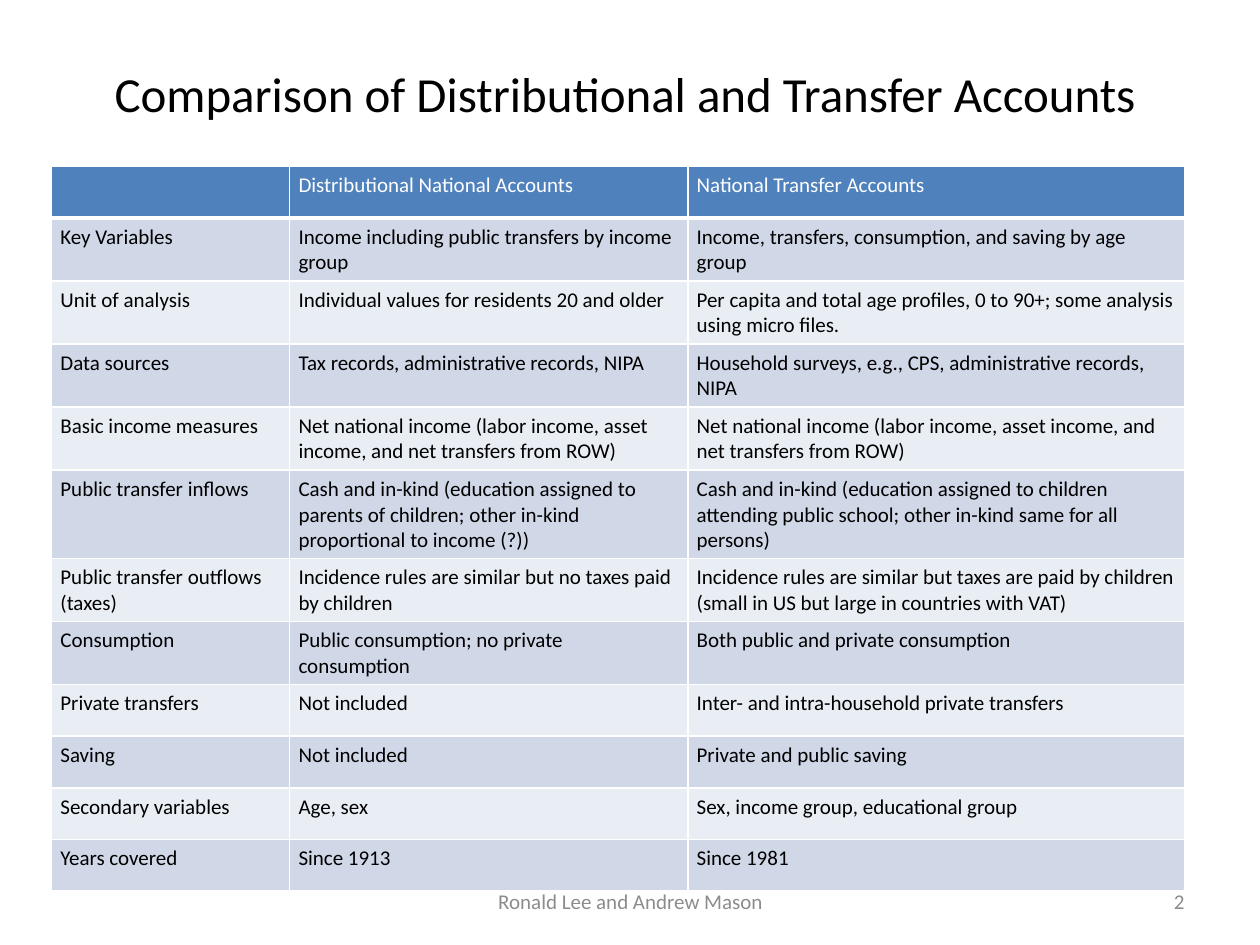
from lxml import etree
from pptx import Presentation
from pptx.dml.color import RGBColor
from pptx.enum.text import MSO_ANCHOR, PP_ALIGN
from pptx.oxml.ns import qn
from pptx.util import Inches, Pt

MIDDLE = MSO_ANCHOR.MIDDLE
CENTER, RIGHT = PP_ALIGN.CENTER, PP_ALIGN.RIGHT
FONT = "Calibri"
COLORS = {
    "black": "000000",
    "white": "FFFFFF",
    "gray": "8C8C8C",
    "head": "4F81BD",
    "dark": "D0D8E8",
    "light": "E9EDF4",
}
WIDTHS = [1.89, 3.16, 3.94]
ROW = 0.41
INCOME = "Net national income (labor income, asset income, and net transfers from ROW)"
ROWS = [
    ("", "Distributional National Accounts", "National Transfer Accounts"),
    ("Key Variables", "Income including public transfers by income group",
     "Income, transfers, consumption, and saving by age group"),
    ("Unit of analysis", "Individual values for residents 20 and older",
     "Per capita and total age profiles, 0 to 90+; some analysis using micro files."),
    ("Data sources", "Tax records, administrative records, NIPA",
     "Household surveys, e.g., CPS, administrative records, NIPA"),
    ("Basic income measures", INCOME, INCOME),
    ("Public transfer inflows",
     "Cash and in-kind (education assigned to parents of children; "
     "other in-kind proportional to income (?))",
     "Cash and in-kind (education assigned to children attending public school; "
     "other in-kind same for all persons)"),
    ("Public transfer outflows (taxes)",
     "Incidence rules are similar but no taxes paid by children",
     "Incidence rules are similar but taxes are paid by children "
     "(small in US but large in countries with VAT)"),
    ("Consumption", "Public consumption; no private consumption",
     "Both public and private consumption"),
    ("Private transfers", "Not included", "Inter- and intra-household private transfers"),
    ("Saving", "Not included", "Private and public saving"),
    ("Secondary variables", "Age, sex", "Sex, income group, educational group"),
    ("Years covered", "Since 1913", "Since 1981"),
]


def rgb(name):
    return RGBColor.from_string(COLORS[name])


def add_run(par, text, size, color):
    run = par.add_run()
    run.text = text
    run.font.name = FONT
    run.font.size = Pt(size)
    run.font.color.rgb = rgb(color)


def add_text(slide, box, text, size, color, align):
    frame = slide.shapes.add_textbox(*map(Inches, box)).text_frame
    frame.word_wrap = True
    frame.vertical_anchor = MIDDLE
    par = frame.paragraphs[0]
    par.alignment = align
    add_run(par, text, size, color)


def set_edges(cell, base):
    """Draw white cell borders; base is the width of the bottom one."""
    props = cell._tc.get_or_add_tcPr()
    sides = [("lnL", 1), ("lnR", 1), ("lnT", 1), ("lnB", base)]
    for spot, (tag, width) in enumerate(sides):
        line = etree.Element(qn("a:" + tag), w=str(Pt(width)))
        fill = etree.SubElement(line, qn("a:solidFill"))
        etree.SubElement(fill, qn("a:srgbClr"), val=COLORS["white"])
        props.insert(spot, line)


def fill_cell(cell, text, fill, color, base):
    cell.fill.solid()
    cell.fill.fore_color.rgb = rgb(fill)
    cell.margin_left = cell.margin_right = Inches(0.07)
    cell.margin_top = cell.margin_bottom = Inches(0.05)
    if text:
        add_run(cell.text_frame.paragraphs[0], text, 12, color)
    set_edges(cell, base)


def add_grid(slide, left, top):
    table = slide.shapes.add_table(
        len(ROWS), len(WIDTHS), Inches(left), Inches(top),
        Inches(sum(WIDTHS)), Inches(ROW * len(ROWS))).table
    for col, width in zip(table.columns, WIDTHS):
        col.width = Inches(width)
    for r, texts in enumerate(ROWS):
        table.rows[r].height = Inches(ROW)
        if r == 0:
            style = "head", "white", 3
        else:
            style = "dark" if r % 2 else "light", "black", 1
        for c, text in enumerate(texts):
            fill_cell(table.cell(r, c), text, *style)


def main():
    deck = Presentation()
    deck.slide_width, deck.slide_height = Inches(10), Inches(7.5)
    slide = deck.slides.add_slide(deck.slide_layouts[6])

    # Title
    add_text(slide, (0.5, 0.3, 8.92, 0.87),
             "Comparison of Distributional and Transfer Accounts", 28, "black", CENTER)

    # Comparison table
    add_grid(slide, 0.41, 1.32)

    # Footer and page number
    add_text(slide, (3.42, 6.95, 3.17, 0.4),
             "Ronald Lee and Andrew Mason", 12, "gray", CENTER)
    add_text(slide, (7.17, 6.95, 2.33, 0.4), "2", 12, "gray", RIGHT)

    deck.save("out.pptx")


if __name__ == "__main__":
    main()
